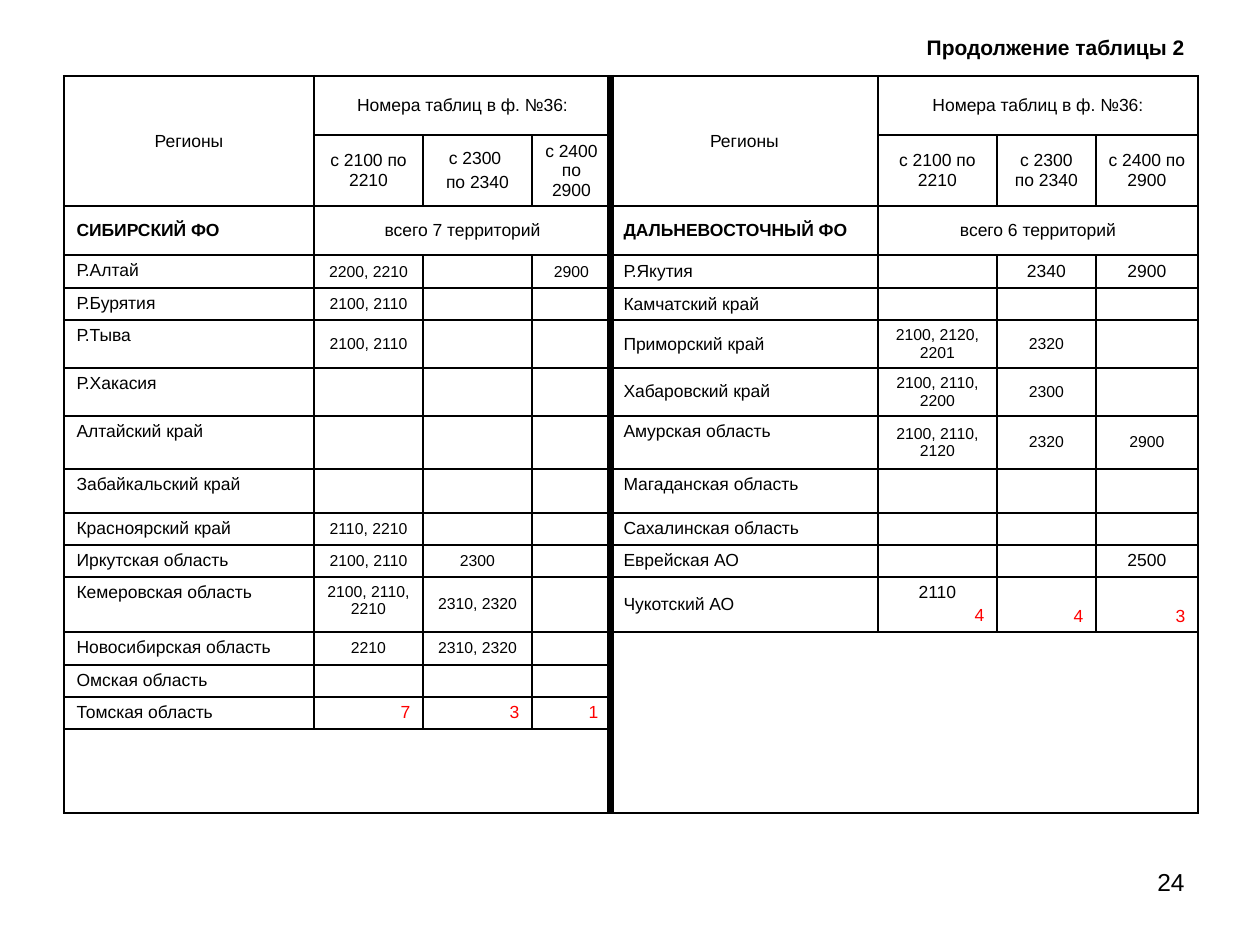
import pptx
import pptx.dml.color
import pptx.enum.text
import pptx.oxml.ns
import pptx.util
import lxml.etree

BLACK = pptx.dml.color.RGBColor(0, 0, 0)
RED = pptx.dml.color.RGBColor(255, 0, 0)
EMU_PER_PX = 914400 // 126
ALIGN = pptx.enum.text.PP_ALIGN
ANCHOR = pptx.enum.text.MSO_ANCHOR
PLAIN_STYLE = "{2D5ABB26-0587-4C30-8999-92F81FD0307C}"

COLUMNS = [250, 109, 109, 79, 267, 119, 99, 102]
HEIGHTS = [59, 71, 49, 33, 32, 48, 48, 53, 44, 32, 32, 55, 33, 32, 32, 84]
WIDE_MARGIN, NARROW_MARGIN = 6, 4
NAME_COLUMNS = (0, 4)
HEADING_ROWS = 3
MERGES = [(0, 0, 1, 0), (0, 1, 0, 3), (0, 4, 1, 4), (0, 5, 0, 7),
          (2, 1, 2, 3), (2, 5, 2, 7), (12, 4, 15, 7), (15, 0, 15, 3)]
ROWS = [
    ["Регионы", "Номера таблиц в ф. №36:", "", "", "Регионы", "Номера таблиц в ф. №36:", "", ""],
    ["", "с 2100 по 2210", "с 2300 \nпо 2340", "с 2400 по 2900",
     "", "с 2100 по 2210", "с 2300 по 2340", "с 2400 по 2900"],
    ["СИБИРСКИЙ ФО", "всего 7 территорий", "", "", "ДАЛЬНЕВОСТОЧНЫЙ ФО", "всего 6 территорий", "", ""],
    ["Р.Алтай", "2200, 2210", "", "2900", "Р.Якутия", "", "2340", "2900"],
    ["Р.Бурятия", "2100, 2110", "", "", "Камчатский край", "", "", ""],
    ["Р.Тыва", "2100, 2110", "", "", "Приморский край", "2100, 2120, 2201", "2320", ""],
    ["Р.Хакасия", "", "", "", "Хабаровский край", "2100, 2110, 2200", "2300", ""],
    ["Алтайский край", "", "", "", "Амурская область", "2100, 2110, 2120", "2320", "2900"],
    ["Забайкальский край", "", "", "", "Магаданская область", "", "", ""],
    ["Красноярский край", "2110, 2210", "", "", "Сахалинская область", "", "", ""],
    ["Иркутская область", "2100, 2110", "2300", "", "Еврейская АО", "", "", "2500"],
    ["Кемеровская область", "2100, 2110, 2210", "2310, 2320", "", "Чукотский АО", "2110\n4", "4", "3"],
    ["Новосибирская область", "2210", "2310, 2320", "", "", "", "", ""],
    ["Омская область", "", "", "", "", "", "", ""],
    ["Томская область", "7", "3", "1", "", "", "", ""],
    [""] * 8,
]
LARGE_CODES = {(3, 6), (3, 7), (10, 7), (11, 5)}
TOP_CELLS = {(7, 4), (8, 4), (11, 1)}
BOTTOM_CELLS = {(11, 6), (11, 7)}
REGIONS = {(row, column): merge for merge in MERGES
           for row in range(merge[0], merge[2] + 1)
           for column in range(merge[1], merge[3] + 1)}


def px(length):
    """Turn pixels into EMU."""
    return pptx.util.Emu(length * EMU_PER_PX)


def write_text(frame, text, size=10, bold=False, color=BLACK, align=ALIGN.LEFT, before=0):
    """Fill a text frame with one paragraph per line; lone digits are red totals."""
    frame.word_wrap = True
    for index, line in enumerate(text.split("\n")):
        para = frame.paragraphs[0] if index == 0 else frame.add_paragraph()
        total = len(line) == 1
        para.alignment = ALIGN.RIGHT if total else align
        para.space_before = pptx.util.Pt(before)
        if not line:
            lxml.etree.SubElement(para._p, pptx.oxml.ns.qn("a:endParaRPr"), sz=str(size * 100))
            continue
        span = para.add_run()
        span.text = line
        span.font.name = "Arial"
        span.font.size = pptx.util.Pt(10 if total else size)
        span.font.bold = bold
        span.font.color.rgb = RED if total else color


def cell_format(row, column):
    """Return the text format and the anchor of a table cell."""
    place = (row, column)
    name = column in NAME_COLUMNS
    heading = row < HEADING_ROWS
    large = heading or name or place in LARGE_CODES
    style = {"size": 10 if large else 9,
             "bold": name and row == 2,
             "align": ALIGN.LEFT if name and row > 1 else ALIGN.CENTER,
             "before": 2}
    if place in BOTTOM_CELLS:
        return style, ANCHOR.BOTTOM
    if place in TOP_CELLS or (column == 0 and not heading):
        return style, ANCHOR.TOP
    return style, ANCHOR.MIDDLE


class Page:
    """Hold the slide and draw its elements in one style."""

    def __init__(self, deck):
        self.slide = deck.slides.add_slide(deck.slide_layouts[6])

    def label(self, text, left, top, width, height, anchor=ANCHOR.TOP, **style):
        """Add a right-aligned text box."""
        box = self.slide.shapes.add_textbox(px(left), px(top), px(width), px(height))
        box.text_frame.vertical_anchor = anchor
        write_text(box.text_frame, text, align=ALIGN.RIGHT, **style)

    def border(self, cell, side, points):
        """Draw one side of a cell."""
        properties = cell._tc.get_or_add_tcPr()
        line = lxml.etree.SubElement(properties, pptx.oxml.ns.qn("a:ln" + side),
                                     w=str(int(pptx.util.Pt(points))))
        fill = lxml.etree.SubElement(line, pptx.oxml.ns.qn("a:solidFill"))
        lxml.etree.SubElement(fill, pptx.oxml.ns.qn("a:srgbClr"), val=str(BLACK))

    def frame_cell(self, cell, row, column):
        """Draw the outline of a merged region on its first cell and along its edge."""
        first_row, first_column, last_row, last_column = REGIONS.get(
            (row, column), (row, column, row, column))
        origin = (row, column) == (first_row, first_column)
        if column == first_column:
            self.border(cell, "L", {0: 1.5, 4: 4.5}.get(column, 1))
        if origin or column == last_column:
            self.border(cell, "R", {3: 4.5, 7: 1.5}.get(last_column, 1))
        if row == first_row:
            self.border(cell, "T", 1.5 if row == 0 else 1)
        if origin or row == last_row:
            self.border(cell, "B", 1.5 if last_row == len(HEIGHTS) - 1 else 1)

    def table(self, left, top):
        """Add the table of regions."""
        table = self.slide.shapes.add_table(
            len(HEIGHTS), len(COLUMNS), px(left), px(top),
            px(sum(COLUMNS)), px(sum(HEIGHTS))).table
        table.first_row = table.horz_banding = False
        table._tbl.tblPr.find(pptx.oxml.ns.qn("a:tableStyleId")).text = PLAIN_STYLE
        for column, width in zip(table.columns, COLUMNS):
            column.width = px(width)
        for row, height in zip(table.rows, HEIGHTS):
            row.height = px(height)
        for first_row, first_column, last_row, last_column in MERGES:
            table.cell(first_row, first_column).merge(table.cell(last_row, last_column))
        for row, texts in enumerate(ROWS):
            for column, text in enumerate(texts):
                cell = table.cell(row, column)
                style, anchor = cell_format(row, column)
                write_text(cell.text_frame, text, **style)
                cell.vertical_anchor = anchor
                cell.margin_top = px(WIDE_MARGIN if anchor == ANCHOR.TOP else NARROW_MARGIN)
                cell.margin_bottom = px(WIDE_MARGIN if anchor == ANCHOR.BOTTOM else NARROW_MARGIN)
                self.frame_cell(cell, row, column)
                cell.fill.background()


def main():
    """Build the deck and save it."""
    deck = pptx.Presentation()
    deck.slide_width, deck.slide_height = px(1260), px(945)
    page = Page(deck)
    page.label("24", 903, 861, 294, 66, size=14)
    page.label("Продолжение таблицы 2", 63, 38, 1134, 18, anchor=ANCHOR.MIDDLE, size=12, bold=True)
    page.table(64, 76)
    deck.save("out.pptx")


if __name__ == "__main__":
    main()
